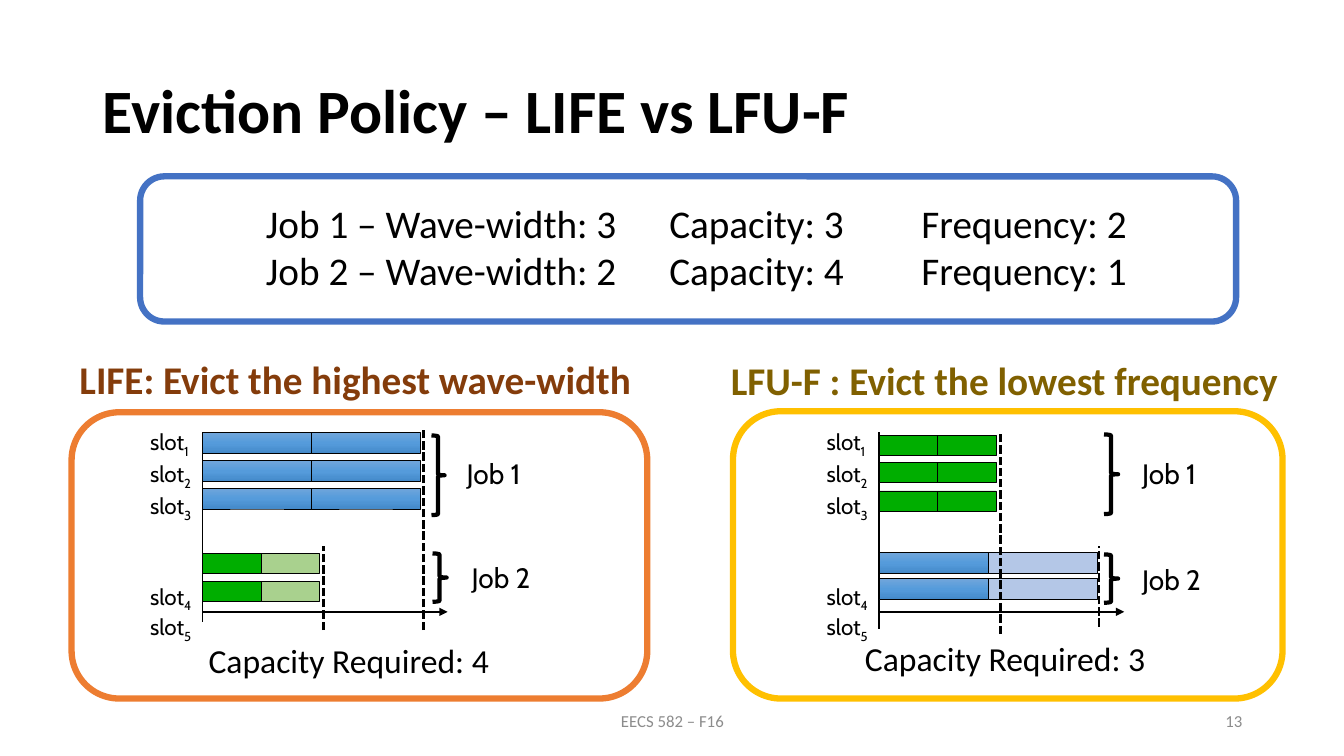
from copy import deepcopy

from pptx import Presentation
from pptx.dml.color import RGBColor
from pptx.enum.dml import MSO_LINE
from pptx.enum.shapes import MSO_CONNECTOR, MSO_SHAPE
from pptx.enum.text import MSO_ANCHOR, PP_ALIGN
from pptx.oxml.ns import qn
from pptx.util import Inches, Pt
from lxml import etree

RECT = MSO_SHAPE.RECTANGLE
ROUNDED = MSO_SHAPE.ROUNDED_RECTANGLE
BRACE = MSO_SHAPE.RIGHT_BRACE
STRAIGHT = MSO_CONNECTOR.STRAIGHT
DASH = MSO_LINE.SQUARE_DOT
TOP, MIDDLE = MSO_ANCHOR.TOP, MSO_ANCHOR.MIDDLE
LEFT, CENTER, RIGHT = PP_ALIGN.LEFT, PP_ALIGN.CENTER, PP_ALIGN.RIGHT

COLORS = {
    "black": "000000", "white": "FFFFFF", "grey": "8C8C8C",
    "blue": "4472C4", "orange": "ED7D31", "gold": "FFC000",
    "brown": "843C0B", "olive": "806000",
    "green": "00AE00", "pale green": "A9D18E", "pale blue": "B4C7E7",
    "sky top": "71A6DB", "sky middle": "559BDB", "sky bottom": "448ACA",
}
SKY = ("sky top", "sky middle", "sky bottom")
BAR_SIZES = {"sky": (1.08, 0.21), "pale blue": (1.08, 0.21),
             "green": (0.58, 0.2), "pale green": (0.58, 0.2)}
SLOTS = "slot_1\nslot_2\nslot_3\nslot_4\nslot_5"
SLOT_GAPS = (0, 1, 1, 43, 0)


def rgb(name):
    return RGBColor.from_string(COLORS[name])


class Board:
    def __init__(self, slide):
        self.slide = slide
        self.shapes = slide.shapes

    def start_group(self):
        self.shapes = self.slide.shapes.add_group_shape().shapes

    def end_group(self):
        self.shapes = self.slide.shapes

    def text(self, content, box, size=28, font="Calibri", color="black",
             bold=False, align=LEFT, anchor=TOP, spacing=1, gaps=(), tabs=()):
        frame = self.shapes.add_textbox(*map(Inches, box)).text_frame
        frame.word_wrap = True
        frame.vertical_anchor = anchor
        for index, line in enumerate(content.split("\n")):
            paragraph = frame.paragraphs[0] if index == 0 else frame.add_paragraph()
            paragraph.alignment = align
            paragraph.line_spacing = spacing
            if gaps:
                paragraph.space_before = Pt(gaps[index])
            if tabs:
                stops = etree.SubElement(paragraph._p.get_or_add_pPr(), qn("a:tabLst"))
                for stop in tabs:
                    etree.SubElement(stops, qn("a:tab"), pos=str(Inches(stop)), algn="l")
            base, _, subscript = line.partition("_")
            for part in filter(None, (base, subscript)):
                run = paragraph.add_run()
                run.text = part
                run.font.size = Pt(size)
                run.font.name = font
                run.font.bold = bold
                run.font.color.rgb = rgb(color)
            if subscript:
                run.font._element.set("baseline", "-25000")

    def shape(self, kind, box, fill=None, line="black", width=0.5):
        shape = self.shapes.add_shape(kind, *map(Inches, box))
        shape.shadow.inherit = False
        shape.line.color.rgb = rgb(line)
        shape.line.width = Pt(width)
        if fill is None:
            shape.fill.background()
        elif fill == "sky":
            self.shade(shape)
        else:
            shape.fill.solid()
            shape.fill.fore_color.rgb = rgb(fill)

    def shade(self, shape):
        shape.fill.gradient()
        shape.fill.gradient_angle = 270
        stops = shape._element.spPr.find(qn("a:gradFill")).find(qn("a:gsLst"))
        stops.append(deepcopy(stops[0]))
        for index, stop in enumerate(shape.fill.gradient_stops):
            stop.position = index / 2
            stop.color.rgb = rgb(SKY[index])

    def line(self, start, end, width=1, dashed=False, arrow=False):
        line = self.shapes.add_connector(STRAIGHT, *map(Inches, start + end))
        line.line.color.rgb = rgb("black")
        line.line.width = Pt(width)
        if dashed:
            line.line.dash_style = DASH
        if arrow:
            etree.SubElement(line.line._get_or_add_ln(), qn("a:tailEnd"), type="triangle")
        etree.SubElement(line._element.spPr, qn("a:effectLst"))

    def schedule(self, left, axis_end, rows, finishes, braces, jobs):
        self.start_group()
        self.text(SLOTS, (left - 0.62, 4.2, 0.65, 1.87), size=16, font="Cabin",
                  gaps=SLOT_GAPS)
        self.line((left, axis_end), (left, 4.29))
        for top, *tasks in rows:
            x = left
            for task in tasks:
                width, height = BAR_SIZES[task]
                self.shape(RECT, (x, top, width, height), task)
                x += width
        self.line((left, 6.07), (left + 2.43, 6.07), arrow=True)
        for x, bottom, top in finishes:
            self.line((x, bottom), (x, top), width=2, dashed=True)
        for brace in braces:
            self.shape(BRACE, brace, width=3)
        for number, (x, y) in enumerate(jobs, 1):
            self.text(f"Job {number}", (x, y, 0.87, 0.44), size=20, font="Cabin")
        self.end_group()


def main():
    deck = Presentation()
    deck.slide_width, deck.slide_height = Inches(13.33), Inches(7.5)
    board = Board(deck.slides.add_slide(deck.slide_layouts[6]))

    board.shape(ROUNDED, (7.27, 4.08, 5.45, 2.85), "white", "gold", 4.5)
    board.shape(ROUNDED, (0.71, 4.09, 5.71, 2.84), "white", "orange", 4.5)
    board.text("Eviction Policy – LIFE vs LFU-F", (0.92, 0.4, 11.5, 1.45),
               size=44, bold=True, anchor=MIDDLE, spacing=0.9)

    board.schedule(
        2.01, 6.17,
        rows=[(top, "sky", "sky") for top in (4.29, 4.57, 4.84)]
        + [(top, "green", "pale green") for top in (5.49, 5.77)],
        finishes=[(4.2, 6.25, 4.25), (3.21, 6.25, 5.42)],
        braces=[(4.28, 4.32, 0.13, 0.79), (4.29, 5.49, 0.14, 0.48)],
        jobs=[(4.53, 4.48), (4.58, 5.51)])
    board.schedule(
        8.72, 6.24,
        rows=[(top, "green", "green") for top in (4.32, 4.59, 4.87)]
        + [(top, "sky", "pale blue") for top in (5.48, 5.74)],
        finishes=[(10.9, 6.22, 5.42), (9.92, 6.29, 4.29)],
        braces=[(10.95, 4.31, 0.14, 0.79), (10.95, 5.5, 0.14, 0.48)],
        jobs=[(11.23, 4.48), (11.23, 5.53)])

    board.text("LIFE: Evict the highest wave-width", (0.69, 3.53, 6.7, 0.64),
               color="brown", bold=True, spacing=0.9)
    board.text("LFU-F : Evict the lowest frequency", (7.15, 3.49, 5.69, 0.57),
               color="olive", bold=True)

    board.shape(ROUNDED, (1.39, 1.75, 10.87, 1.44), "white", "blue", 4.5)
    board.text("Job 1 – Wave-width: 3\tCapacity: 3\tFrequency: 2\n"
               "Job 2 – Wave-width: 2\tCapacity: 4\tFrequency: 1",
               (2.54, 1.93, 8.83, 1.04), tabs=(4, 6.5))

    board.text("Capacity Required: 4", (1.97, 6.3, 3.31, 0.5), size=24)
    board.text("Capacity Required: 3", (8.48, 6.28, 3.31, 0.5), size=24)
    board.text("13", (9.42, 6.95, 3, 0.4), size=12, color="grey",
               align=RIGHT, anchor=MIDDLE)
    board.text("EECS 582 – F16", (4.42, 6.95, 4.5, 0.4), size=12, color="grey",
               align=CENTER, anchor=MIDDLE)

    deck.save("out.pptx")


if __name__ == "__main__":
    main()
